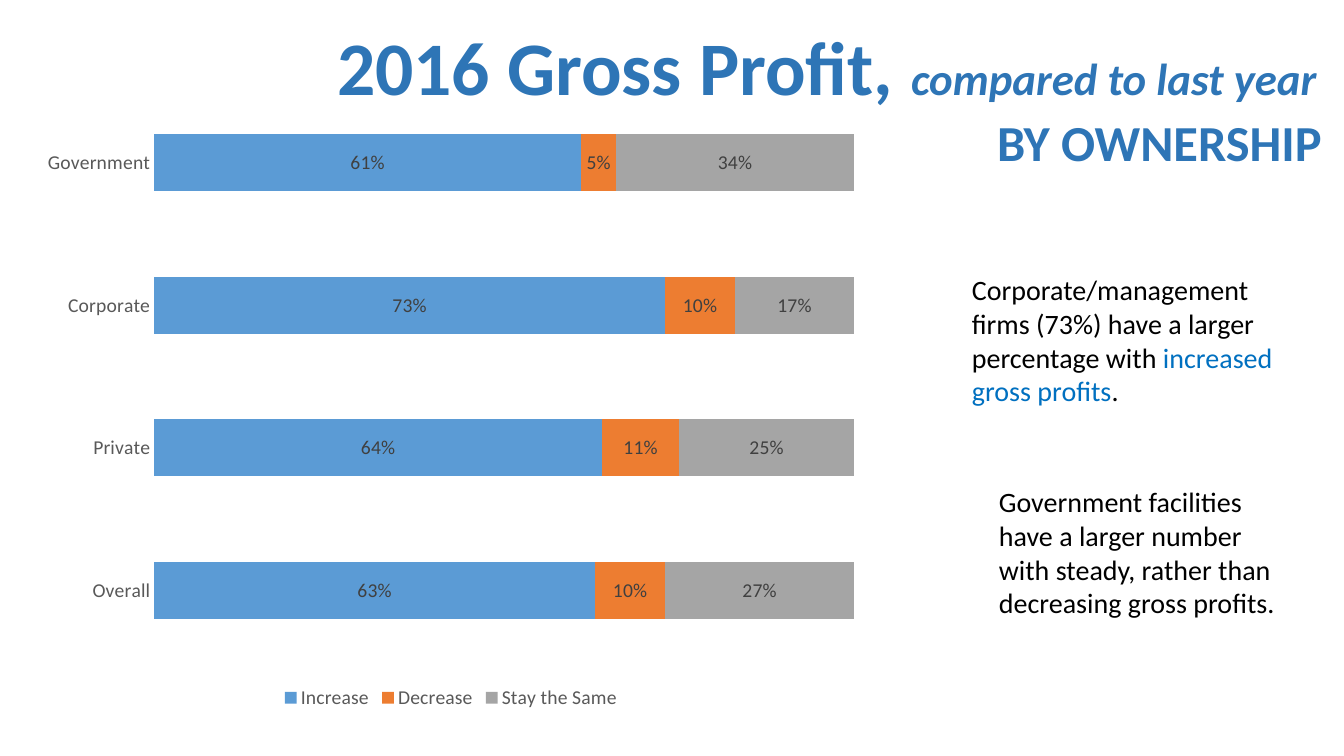
from pptx import Presentation
from pptx.chart.data import CategoryChartData
from pptx.dml.color import RGBColor
from pptx.enum.chart import XL_CHART_TYPE, XL_LEGEND_POSITION, XL_TICK_MARK
from pptx.enum.text import MSO_ANCHOR, MSO_AUTO_SIZE, PP_ALIGN
from pptx.util import Pt

EMU_PER_PX = 914400 / 100.8
SLIDE_SIZE = (1344, 756)
FONT = "Calibri"
TITLE_COLOR, BLACK, ACCENT = "2E75B6", "000000", "0070C0"
AXIS_COLOR, LABEL_COLOR = "595959", "404040"
STACKED = XL_CHART_TYPE.BAR_STACKED_100
BOTTOM = XL_LEGEND_POSITION.BOTTOM
NO_TICK = XL_TICK_MARK.NONE
TOP = MSO_ANCHOR.TOP
NO_FIT = MSO_AUTO_SIZE.NONE
LEFT, CENTER, RIGHT = PP_ALIGN.LEFT, PP_ALIGN.CENTER, PP_ALIGN.RIGHT

TITLE_BOX = (322, 15, 1010, 163)
TITLE = [
    (CENTER, [("2016 Gross Profit, ", 54, TITLE_COLOR, True, False),
              ("compared to last year", 32, TITLE_COLOR, True, True)]),
    (RIGHT, [("BY OWNERSHIP", 36, TITLE_COLOR, True, False)]),
]
NOTES = [
    ((962, 268, 342, 146), [(LEFT, [
        ("Corporate/management firms (73%) have a larger percentage with ", 20, BLACK, False, False),
        ("increased gross profits", 20, ACCENT, False, False),
        (".", 20, BLACK, False, False)])]),
    ((989, 480, 303, 146), [(LEFT, [
        ("Government facilities have a larger number with steady, "
         "rather than decreasing gross profits.", 20, BLACK, False, False)])]),
]
CHART_BOX = (31, 79, 840, 635)
OWNERSHIP = ["Overall", "Private", "Corporate", "Government"]
SERIES = [
    ("Increase", (0.63, 0.64, 0.73, 0.61), "5B9BD5"),
    ("Decrease", (0.10, 0.11, 0.10, 0.05), "ED7D31"),
    ("Stay the Same", (0.27, 0.25, 0.17, 0.34), "A5A5A5"),
]


def px(value):
    return round(value * EMU_PER_PX)


def rgb(value):
    return RGBColor.from_string(value)


def style_font(font, size, color, bold=False, italic=False):
    font.name = FONT
    font.size = Pt(size)
    font.color.rgb = rgb(color)
    font.bold = bold
    font.italic = italic


def write_text(frame, paragraphs, wrap):
    frame.word_wrap = wrap
    frame.auto_size = NO_FIT
    frame.vertical_anchor = TOP
    for index, (alignment, spans) in enumerate(paragraphs):
        para = frame.add_paragraph() if index else frame.paragraphs[0]
        para.alignment = alignment
        for text, *style in spans:
            span = para.add_run()
            span.text = text
            style_font(span.font, *style)


def add_profit_chart(page):
    data = CategoryChartData(number_format="0%")
    data.categories = OWNERSHIP
    for name, values, _ in SERIES:
        data.add_series(name, values)
    chart = page.shapes.add_chart(STACKED, *map(px, CHART_BOX), data).chart
    style_font(chart.font, 14, AXIS_COLOR)
    chart.has_title = False
    chart.has_legend = True
    chart.legend.position = BOTTOM
    chart.legend.include_in_layout = False
    style_font(chart.legend.font, 14, AXIS_COLOR)

    category_axis = chart.category_axis
    category_axis.major_tick_mark = NO_TICK
    category_axis.format.line.fill.background()
    style_font(category_axis.tick_labels.font, 14, AXIS_COLOR)
    chart.value_axis.has_major_gridlines = False
    chart.value_axis.visible = False

    plot = chart.plots[0]
    plot.gap_width = 150
    plot.overlap = 100
    for series, (_, _, color) in zip(plot.series, SERIES):
        series.format.fill.solid()
        series.format.fill.fore_color.rgb = rgb(color)
        labels = series.data_labels
        labels.show_value = True
        labels.number_format = "0%"
        labels.number_format_is_linked = False
        style_font(labels.font, 14, LABEL_COLOR)


def main():
    deck = Presentation()
    deck.slide_width, deck.slide_height = map(px, SLIDE_SIZE)
    page = deck.slides.add_slide(deck.slide_layouts[5])
    title = page.shapes.title
    title.left, title.top, title.width, title.height = map(px, TITLE_BOX)
    write_text(title.text_frame, TITLE, False)
    add_profit_chart(page)
    for place, paragraphs in NOTES:
        box = page.shapes.add_textbox(*map(px, place))
        write_text(box.text_frame, paragraphs, True)
    deck.save("out.pptx")


if __name__ == "__main__":
    main()
